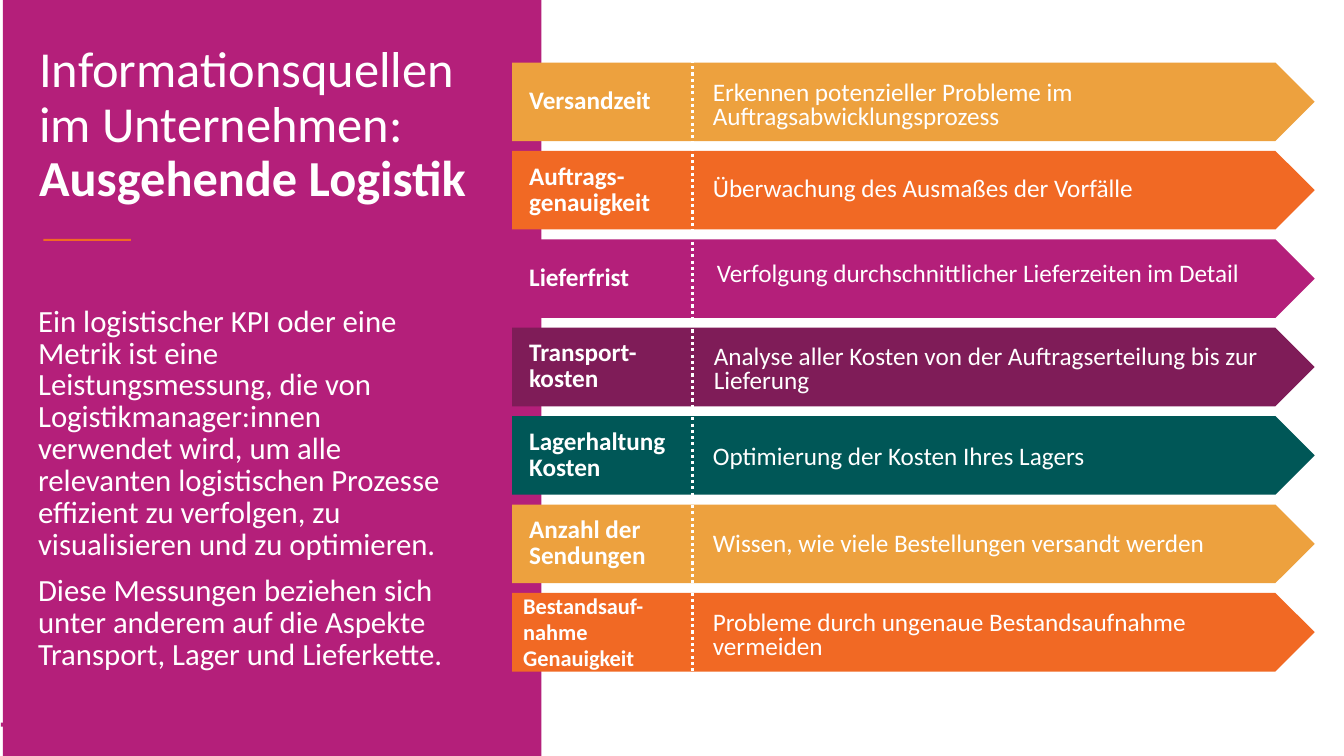
"""Build the slide on information sources in outgoing logistics."""
from lxml import etree
from pptx import Presentation
from pptx import util as u
from pptx.dml.color import RGBColor
from pptx.enum import dml, shapes, text
from pptx.oxml.ns import qn

COLORS = {
    "white": "FFFFFF",
    "magenta": "B41F7A",
    "amber": "EDA13E",
    "orange": "F16924",
    "plum": "7F1C58",
    "teal": "005757",
}

prs = Presentation()
prs.slide_width, prs.slide_height = u.Inches(13.33), u.Inches(7.5)
slide = prs.slides.add_slide(prs.slide_layouts[6])


def add_block(kind, left, top, width, height, color):
    block = slide.shapes.add_shape(
        kind, u.Inches(left), u.Inches(top), u.Inches(width), u.Inches(height))
    block.shadow.inherit = False
    block.fill.solid()
    block.fill.fore_color.rgb = RGBColor.from_string(COLORS[color])
    block.line.fill.background()


def add_text(words, left, top, width, height, size, spacing, bold=None):
    box = slide.shapes.add_textbox(
        u.Inches(left), u.Inches(top), u.Inches(width), u.Inches(height))
    frame = box.text_frame
    frame.word_wrap = True
    frame.text = words
    for paragraph in frame.paragraphs:
        paragraph.line_spacing = spacing
        paragraph.font.size = u.Pt(size)
        paragraph.font.name = "Calibri"
        paragraph.font.bold = bold
        paragraph.font.color.rgb = RGBColor.from_string(COLORS["white"])
    return frame


rectangle = shapes.MSO_SHAPE.RECTANGLE
add_block(rectangle, 0.01, 7.17, 0.87, 0.04, "magenta")
add_block(rectangle, 0.03, 0, 5.34, 7.5, "magenta")

title = add_text("Informationsquellen im Unternehmen: ",
                 0.29, 0.39, 4.48, 3, 36, 0.9)
topic = title.paragraphs[0].add_run()
topic.text = "Ausgehende Logistik"
topic.font.bold = True
add_block(rectangle, 0.43, 2.37, 0.87, 0.02, "orange")

intro = add_text(
    "Ein logistischer KPI oder eine Metrik ist eine Leistungsmessung, die von "
    "Logistikmanager:innen verwendet wird, um alle relevanten logistischen "
    "Prozesse effizient zu verfolgen, zu visualisieren und zu optimieren.\n"
    "Diese Messungen beziehen sich unter anderem auf die Aspekte Transport, "
    "Lager und Lieferkette.",
    0.28, 2.99, 4.26, 4.12, 22, u.Pt(22.8))
intro.paragraphs[1].space_before = u.Pt(10)

# color, label, label left/width/lines/size, detail, detail left/top/width/height
metrics = [
    ("amber", "Versandzeit", (5.15, 1.68, 1, 18),
     "Erkennen potenzieller Probleme im Auftragsabwicklungsprozess",
     (7.03, 0.8, 5.64, 0.52)),
    ("orange", "Auftrags-\ngenauigkeit", (5.15, 1.41, 2, 18),
     "Überwachung des Ausmaßes der Vorfälle", (7.03, 1.75, 5.31, 0.28)),
    ("magenta", "Lieferfrist", (5.15, 1.64, 1, 18),
     "Verfolgung durchschnittlicher Lieferzeiten im Detail",
     (7.07, 2.6, 5.31, 0.28)),
    ("plum", "Transport-\vkosten", (5.15, 1.34, 2, 18),
     "Analyse aller Kosten von der Auftragserteilung bis zur Lieferung",
     (7.04, 3.42, 5.64, 0.28)),
    ("teal", "Lagerhaltung\vKosten", (5.15, 1.58, 2, 18),
     "Optimierung der Kosten Ihres Lagers", (7.03, 4.41, 5.31, 0.28)),
    ("amber", "Anzahl der\vSendungen", (5.15, 1.42, 2, 18),
     "Wissen, wie viele Bestellungen versandt werden",
     (7.03, 5.27, 5.31, 0.28)),
    ("orange", "Bestandsauf-\nnahme Genauigkeit", (5.09, 1.86, 3, 16),
     "Probleme durch ungenaue Bestandsaufnahme vermeiden",
     (7.03, 6.06, 5.31, 0.28)),
]
BAND_HEIGHT = 0.78
for row, (color, label, label_layout, detail, detail_place) in enumerate(metrics):
    band_top = 0.62 + row * 0.877
    add_block(shapes.MSO_SHAPE.PENTAGON, 5.08, band_top, 7.96, BAND_HEIGHT, color)

    left, width, lines, size = label_layout
    height = 0.11 + 0.26 * lines
    name = add_text(label, left, band_top + (BAND_HEIGHT - height) / 2,
                    width, height, size, u.Pt(18.6), True)
    name.vertical_anchor = text.MSO_ANCHOR.MIDDLE
    name.word_wrap = lines == 3
    name.auto_size = text.MSO_AUTO_SIZE.SHAPE_TO_FIT_TEXT

    purpose = add_text(detail, *detail_place, 18, u.Pt(17.1))
    purpose.margin_left = purpose.margin_right = u.Inches(0.04)
    purpose.margin_top = purpose.margin_bottom = u.Inches(0.02)
    purpose.auto_size = text.MSO_AUTO_SIZE.SHAPE_TO_FIT_TEXT

divider = slide.shapes.add_connector(
    shapes.MSO_CONNECTOR.STRAIGHT,
    u.Inches(6.87), u.Inches(0.47), u.Inches(6.87), u.Inches(6.85))
divider.line.color.rgb = RGBColor.from_string(COLORS["white"])
divider.line.width = u.Pt(2.25)
divider.line.dash_style = dml.MSO_LINE.ROUND_DOT
etree.SubElement(divider._element.spPr, qn("a:effectLst"))

prs.save("out.pptx")
